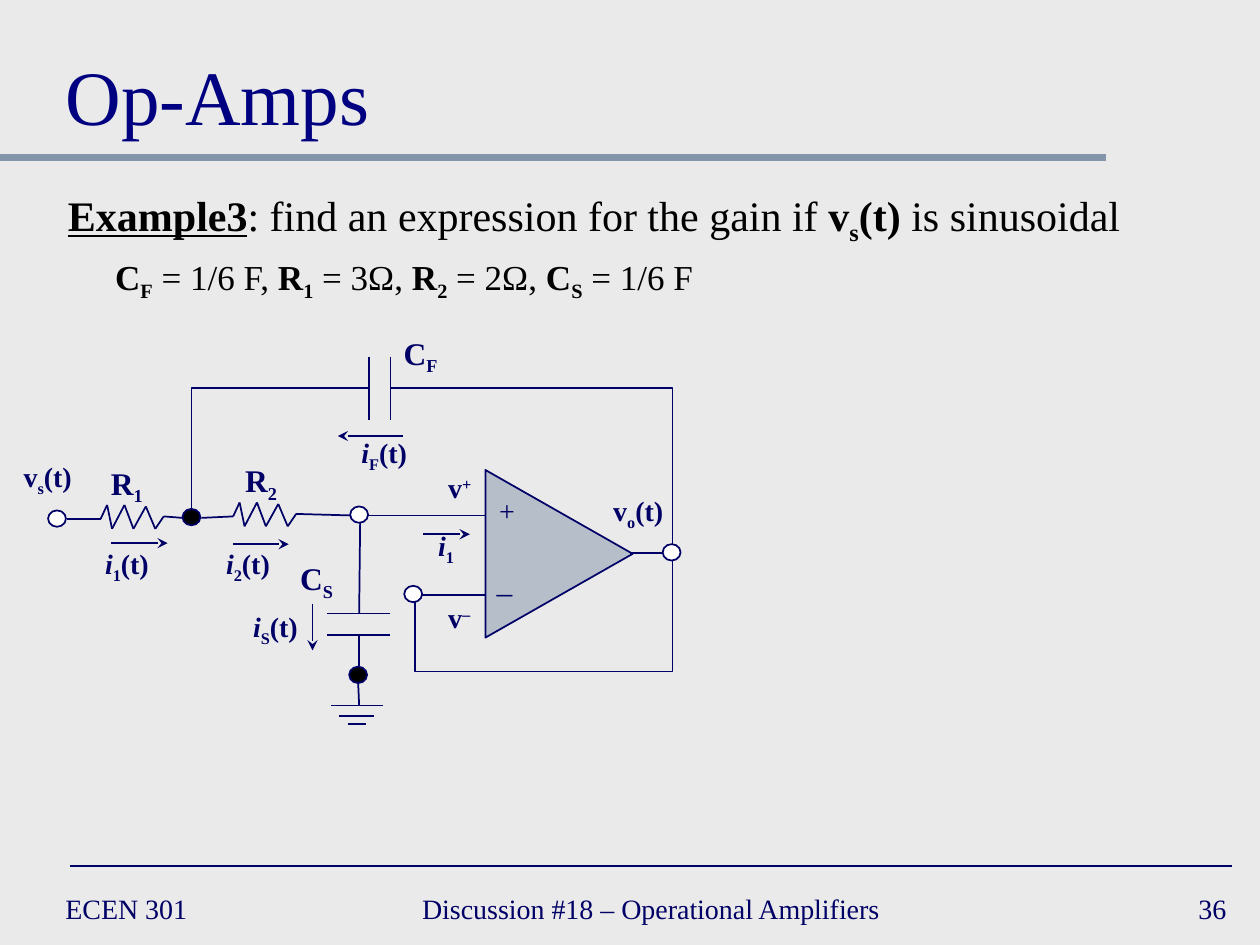
from itertools import pairwise
from lxml.etree import SubElement
from pptx import Presentation
from pptx.dml.color import RGBColor
from pptx.enum.shapes import MSO_CONNECTOR, MSO_SHAPE
from pptx.enum.text import MSO_ANCHOR, MSO_AUTO_SIZE, PP_ALIGN
from pptx.oxml.ns import qn
from pptx.util import Cm, Pt

hue = RGBColor.from_string
NAVY = "000066"
STEEL = "8495A9"
FONT = "Times New Roman"
BASE = {"_": "-25000", "^": "30000"}

deck = Presentation()
deck.slide_width, deck.slide_height = Cm(25.4), Cm(19.05)
slide = deck.slides.add_slide(deck.slide_layouts[5])
slide.background.fill.solid()
slide.background.fill.fore_color.rgb = hue("EAEAEA")
shapes = slide.shapes


def wire(x1, y1, x2, y2, color=NAVY, width=1, arrow=False):
    line = shapes.add_connector(MSO_CONNECTOR.STRAIGHT, Cm(x1), Cm(y1), Cm(x2), Cm(y2))
    line.line.color.rgb = hue(color)
    line.line.width = Pt(width)
    props = line._element.spPr
    if arrow:
        SubElement(props.find(qn("a:ln")), qn("a:tailEnd"), type="stealth")
    SubElement(props, qn("a:effectLst"))


def write(para, size, color, runs):
    """Each run is (text, marks): b bold, i italic, u underlined, _ sub, ^ super."""
    para.font.name, para.font.size = FONT, Pt(size)
    para.font.color.rgb = hue(color)
    for text, marks in runs:
        run = para.add_run()
        run.text = text
        font = run.font
        font.name, font.size = FONT, Pt(size)
        font.color.rgb = hue(color)
        font.bold, font.italic, font.underline = "b" in marks, "i" in marks, "u" in marks
        for mark in BASE:
            if mark in marks:
                run._r.get_or_add_rPr().set("baseline", BASE[mark])


# Rules under the title and above the footer
wire(0, 3.18, 22.3, 3.18, STEEL, 4)
wire(1.42, 17.46, 24.84, 17.46)

# Footer
for x, width, text, align in [
    (1.07, 5.51, "ECEN 301", PP_ALIGN.LEFT),
    (8.26, 10, "Discussion #18 – Operational Amplifiers", PP_ALIGN.LEFT),
    (19.69, 5.28, "36", PP_ALIGN.RIGHT),
]:
    frame = shapes.add_textbox(Cm(x), Cm(17.78), Cm(width), Cm(1.07)).text_frame
    frame.word_wrap = True
    frame.vertical_anchor = MSO_ANCHOR.MIDDLE
    frame.paragraphs[0].alignment = align
    write(frame.paragraphs[0], 16, NAVY, [(text, "")])

# Title
title = shapes.title
title.left, title.top, title.width, title.height = Cm(1.07), Cm(0.43), Cm(23.29), Cm(2.54)
frame = title.text_frame
frame.auto_size = MSO_AUTO_SIZE.NONE
frame.vertical_anchor = MSO_ANCHOR.BOTTOM
frame.paragraphs[0].alignment = PP_ALIGN.LEFT
write(frame.paragraphs[0], 44, "000080", [("Op-Amps", "")])

# Problem statement and given values
frame = shapes.add_textbox(Cm(1.12), Cm(3.71), Cm(22.38), Cm(2.64)).text_frame
frame.word_wrap = True
task, given = frame.paragraphs[0], frame.add_paragraph()
task.line_spacing = given.line_spacing = 0.9
write(task, 24, "000000", [
    ("Example3", "bu"), (": find an expression for the gain if ", ""),
    ("v", "b"), ("s", "b_"), ("(t)", "b"), (" is sinusoidal", ""),
])
given.space_before = Pt(8)
given._p.get_or_add_pPr().set("marL", str(Cm(0.95)))
parts = []
for name, sub, value in [
    ("C", "F", " = 1/6 F, "), ("R", "1", " = 3Ω, "),
    ("R", "2", " = 2Ω, "), ("C", "S", " = 1/6 F"),
]:
    parts += [(name, "b"), (sub, "b_"), (value, "")]
write(given, 20, "000000", parts)

# Amplifier
amp = shapes.add_shape(MSO_SHAPE.ISOSCELES_TRIANGLE, Cm(9.58), Cm(9.68), Cm(3.38), Cm(2.97))
amp.rotation = 90
amp.shadow.inherit = False
amp.fill.solid()
amp.fill.fore_color.rgb = hue(STEEL)
SubElement(amp._element.spPr.find(".//" + qn("a:srgbClr")), qn("a:alpha"), val="50000")
amp.line.color.rgb = hue(NAVY)
amp.line.width = Pt(1)

# Resistors R1 and R2
zigzag = [(0, 0), (0.13, -0.28), (0.23, 0.2), (0.48, -0.28),
          (0.66, 0.2), (0.91, -0.25), (1.1, 0.2), (1.27, -0.05)]
for x, y in [(2.03, 10.46), (4.7, 10.41)]:
    for (x1, y1), (x2, y2) in pairwise(zigzag):
        wire(x + x1, y + y1, x + x2, y + y2)

# Straight wires, capacitor plates and ground bars
for ends in [
    (1.35, 10.46, 2.03, 10.46), (3.3, 10.41, 3.68, 10.44),
    (4.06, 10.44, 4.7, 10.41), (5.97, 10.36, 7.06, 10.39),
    (7.06, 10.39, 9.78, 10.39), (8.51, 11.99, 9.78, 11.99),
    (12.7, 11.15, 13.36, 11.15),
    (7.26, 10.54, 7.24, 12.37), (7.24, 12.8, 7.24, 13.44), (7.22, 13.77, 7.24, 14.22),
    (7.44, 7.19, 7.44, 8.46), (7.87, 7.19, 7.87, 8.46),
    (6.6, 12.37, 7.87, 12.37), (6.6, 12.8, 7.87, 12.8),
    (6.68, 14.22, 7.72, 14.22), (6.83, 14.43, 7.54, 14.43), (7.01, 14.6, 7.37, 14.6),
]:
    wire(*ends)

# Current arrows
for ends in [
    (2.24, 10.95, 3.38, 10.95), (4.7, 10.97, 5.82, 10.97), (8.53, 10.77, 9.47, 10.77),
    (8.13, 8.79, 6.81, 8.79), (6.3, 12.17, 6.3, 13.11),
]:
    wire(*ends, arrow=True)

# Feedback wires with corners
for first, *rest in [
    [(3.86, 10.26), (3.86, 7.82), (7.44, 7.82)],
    [(13.56, 10.97), (13.56, 7.82), (7.87, 7.82)],
    [(8.36, 12.14), (8.36, 13.54), (13.56, 13.54), (13.56, 11.3)],
]:
    pen = shapes.build_freeform(Cm(first[0]), Cm(first[1]))
    pen.add_line_segments([(Cm(x), Cm(y)) for x, y in rest], close=False)
    loop = pen.convert_to_shape()
    loop.shadow.inherit = False
    loop.fill.background()
    loop.line.color.rgb = hue(NAVY)
    loop.line.width = Pt(1)

# Nodes
for x, y, color in [
    (0.97, 10.29, "FFFFFF"), (3.68, 10.26, "000000"), (7.06, 10.21, "FFFFFF"),
    (8.15, 11.81, "FFFFFF"), (13.36, 10.97, "FFFFFF"), (7.04, 13.44, "000000"),
]:
    node = shapes.add_shape(MSO_SHAPE.OVAL, Cm(x), Cm(y), Cm(0.36), Cm(0.33))
    node.shadow.inherit = False
    node.fill.solid()
    node.fill.fore_color.rgb = hue(color)
    node.line.color.rgb = hue(NAVY)
    node.line.width = Pt(1)

# Labels
time = ("(t)", "b")
for x, y, width, size, runs in [
    (9.8, 9.83, 0.84, 16, [("+", "")]),
    (9.75, 11.4, 0.84, 18, [("–", "")]),
    (0.2, 9.14, 1.52, 16, [("v", "b"), ("s", "b_"), time]),
    (12.09, 9.83, 1.55, 16, [("v", "b"), ("o", "b_"), time]),
    (8.76, 9.37, 1.02, 16, [("v", "b"), ("+", "b^")]),
    (8.76, 11.99, 0.99, 16, [("v", "b"), ("–", "b^")]),
    (8.56, 10.54, 0.86, 16, [("i", "bi"), ("1", "b_")]),
    (1.85, 10.9, 1.42, 16, [("i", "bi"), ("1", "b_"), time]),
    (4.29, 10.9, 1.42, 16, [("i", "bi"), ("2", "b_"), time]),
    (7.01, 8.66, 1.47, 16, [("i", "bi"), ("F", "b_"), time]),
    (4.83, 12.17, 1.45, 16, [("i", "bi"), ("S", "b_"), time]),
    (1.96, 9.22, 1.19, 18, [("R", "b"), ("1", "b_")]),
    (4.67, 9.17, 1.19, 18, [("R", "b"), ("2", "b_")]),
    (7.87, 6.6, 1.22, 18, [("C", "b"), ("F", "b_")]),
    (5.79, 11.15, 1.19, 18, [("C", "b"), ("S", "b_")]),
]:
    high = 0.94 if size == 16 else 1.02
    frame = shapes.add_textbox(Cm(x), Cm(y), Cm(width), Cm(high)).text_frame
    frame.word_wrap = False
    frame.paragraphs[0].alignment = PP_ALIGN.CENTER
    write(frame.paragraphs[0], size, NAVY, runs)

deck.save("out.pptx")
